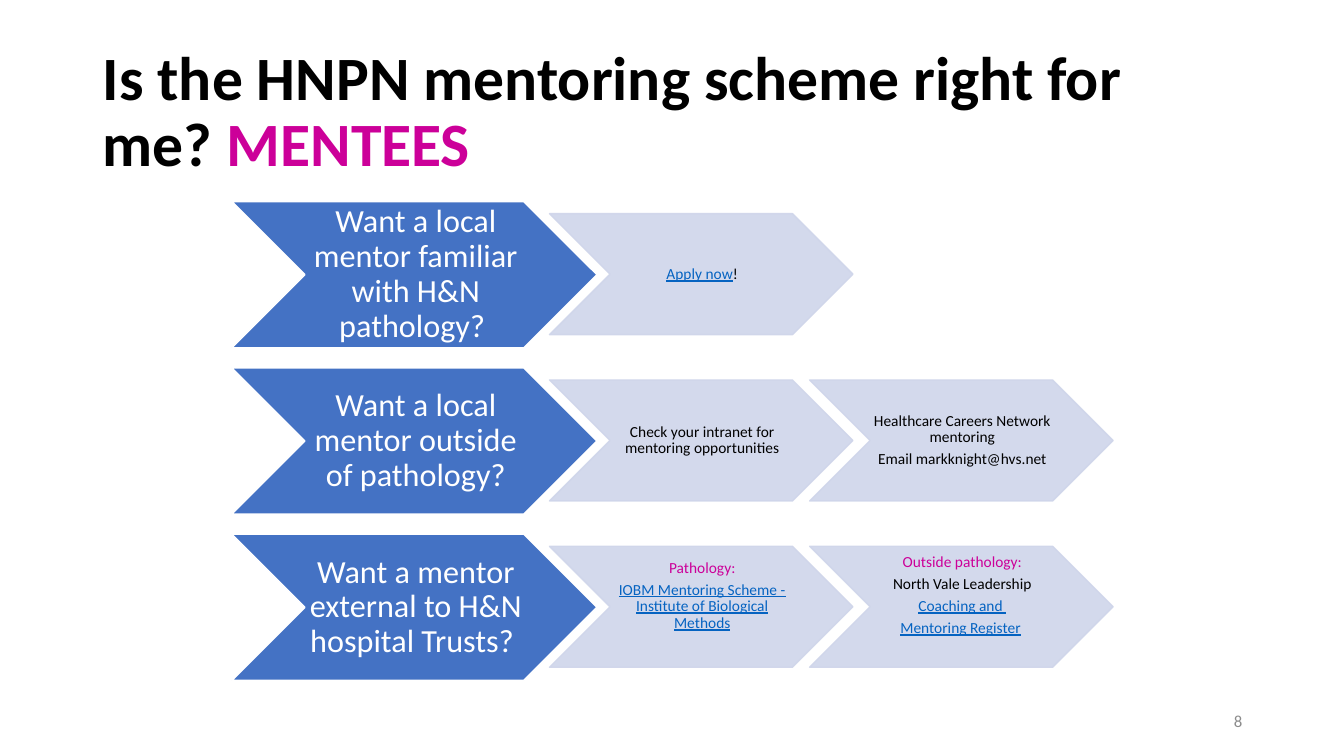
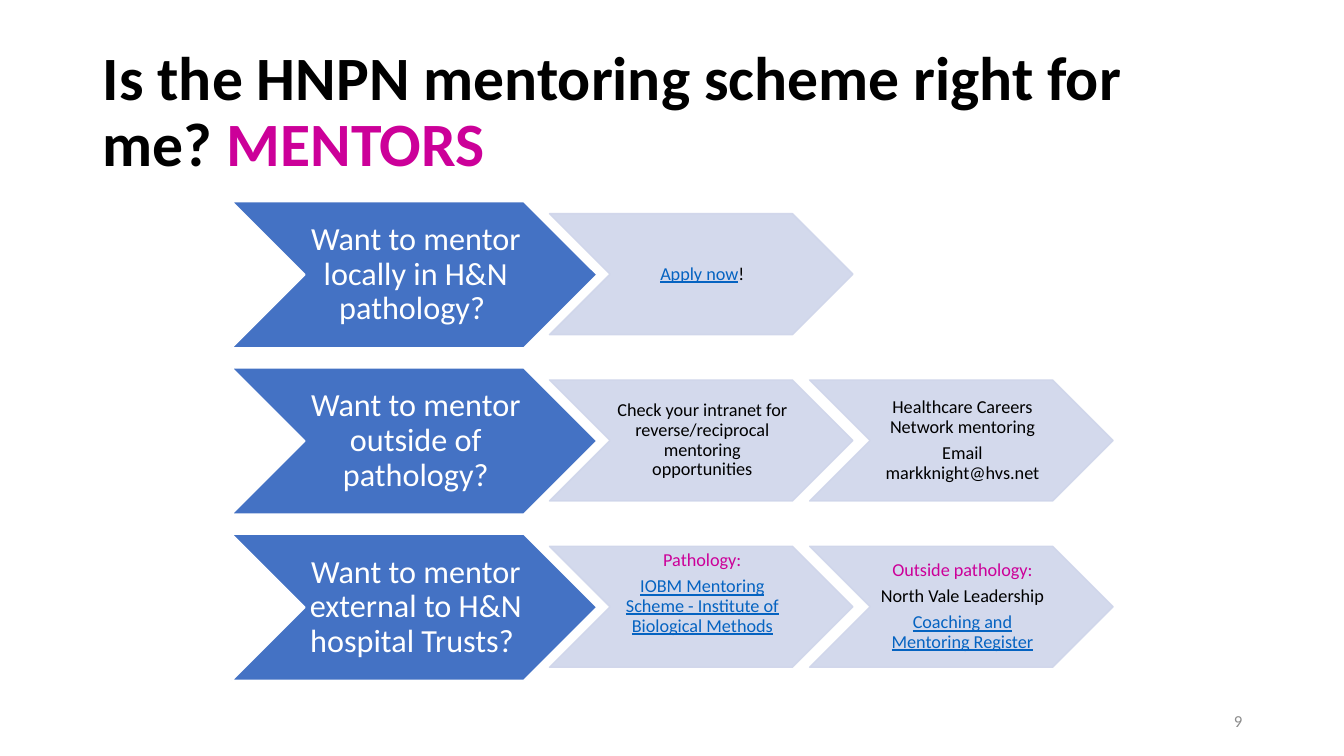
import pptx
import pptx.util
import pptx.dml.color
import pptx.enum.shapes
import pptx.enum.text
import pptx.oxml.ns
import lxml.etree

RGBColor = pptx.dml.color.RGBColor
ALIGN = pptx.enum.text.PP_ALIGN
MIDDLE = pptx.enum.text.MSO_ANCHOR.MIDDLE

PX = 9144  # EMU in one px, 100 px to the inch
FONT = "Calibri"
BLACK = RGBColor(0x00, 0x00, 0x00)
WHITE = RGBColor(0xFF, 0xFF, 0xFF)
BLUE = RGBColor(0x44, 0x72, 0xC4)
PALE = RGBColor(0xCF, 0xD5, 0xEA)
PINK = RGBColor(0xCC, 0x00, 0x99)
LINK = RGBColor(0x05, 0x63, 0xC1)
GREY = RGBColor(0x8C, 0x8C, 0x8C)

TITLE_BOX = (92, 40, 1150, 145)
NUMBER_BOX = (942, 695, 300, 40)
CHART_BOX = (230, 200, 874, 475)
QUESTION_W, QUESTION_H, ROW_STEP = 362, 145, 165
ANSWER_W, ANSWER_H, ANSWER_X, ANSWER_STEP = 301, 120, 315, 258

# Each paragraph is a list of (text, colour) runs
APPLY = [[("Apply now", LINK), ("!", BLACK)]]
NETWORK = [[("Healthcare Careers Network mentoring", BLACK)],
           [("Email markknight@hvs.net", BLACK)]]
PATHOLOGY = [[("Pathology:", PINK)],
             [("IOBM Mentoring Scheme - Institute of Biological Methods", LINK)]]
OUTSIDE = [[("Outside pathology:", PINK)], [("North Vale Leadership", BLACK)]]

# A row is a question and its answers; an answer is (paragraphs, bottom inset)
SLIDES = [
    dict(audience="MENTEES", number=8, size=11, rows=[
        ("Want a local mentor familiar with H&N pathology? ", [(APPLY, 1)]),
        ("Want a local mentor outside of pathology?",
         [([[("Check your intranet for mentoring opportunities", BLACK)]], 1),
          (NETWORK, 1)]),
        ("Want a mentor external to H&N hospital Trusts? ",
         [(PATHOLOGY, 23),
          (OUTSIDE + [[("Coaching and ", LINK)],
                      [("Mentoring Register", LINK), (" ", BLACK)]], 23)]),
    ]),
    dict(audience="MENTORS", number=9, size=13, rows=[
        ("Want to mentor locally in H&N pathology? ", [(APPLY, 1)]),
        ("Want to mentor outside of pathology?",
         [([[("Check your intranet for reverse/reciprocal mentoring "
              "opportunities", BLACK)]], 1),
          (NETWORK, 1)]),
        ("Want to mentor external to H&N hospital Trusts? ",
         [(PATHOLOGY, 27),
          (OUTSIDE + [[("Coaching and Mentoring Register", LINK)]], 1)]),
    ]),
]


def emu(box):
    return [v * PX for v in box]


def write(tf, paragraphs, size, align=ALIGN.CENTER, bold=False,
          line_spacing=0.9, after=0, insets=(10, 5, 10, 5)):
    """Fill a text frame; runs in the link colour are underlined."""
    tf.word_wrap = True
    tf.auto_size = pptx.enum.text.MSO_AUTO_SIZE.NONE
    tf.vertical_anchor = MIDDLE
    (tf.margin_left, tf.margin_top,
     tf.margin_right, tf.margin_bottom) = emu(insets)
    for i, runs in enumerate(paragraphs):
        p = tf.add_paragraph() if i else tf.paragraphs[0]
        p.alignment = align
        p.line_spacing = line_spacing
        p.space_before = pptx.util.Pt(0)
        p.space_after = pptx.util.Pt(after)
        for text, colour in runs:
            r = p.add_run()
            r.text = text
            r.font.name = FONT
            r.font.size = pptx.util.Pt(size)
            r.font.bold = bold
            r.font.underline = colour == LINK
            r.font.color.rgb = colour


def add_chevron(slide, box, fill, line, opacity=100):
    sp = slide.shapes.add_shape(
        pptx.enum.shapes.MSO_SHAPE.CHEVRON, *emu(box))
    sp.shadow.inherit = False
    sp.fill.solid()
    sp.fill.fore_color.rgb = fill
    sp.line.color.rgb = line
    sp.line.width = pptx.util.Pt(1)
    if opacity < 100:
        qn = pptx.oxml.ns.qn
        for clr in sp._element.spPr.iter(qn("a:srgbClr")):
            lxml.etree.SubElement(clr, qn("a:alpha"), val=str(opacity * 1000))
    return sp


def add_row(slide, x, y, question, answers, size):
    # Question
    sp = add_chevron(slide, (x, y, QUESTION_W, QUESTION_H), BLUE, WHITE)
    write(sp.text_frame, [[(question, WHITE)]], 23, insets=(3, 2, 0, 2))
    # Answers, centred on the question's height
    top = y + (QUESTION_H - ANSWER_H) // 2
    for i, (paragraphs, bottom) in enumerate(answers):
        left = x + ANSWER_X + i * ANSWER_STEP
        sp = add_chevron(slide, (left, top, ANSWER_W, ANSWER_H),
                         PALE, PALE, opacity=90)
        write(sp.text_frame, paragraphs, size, after=round(size * 0.35, 1),
              insets=(2, 1, 0, bottom))


def add_chart_rows(slide, box, rows, size):
    x, y = box[:2]
    for i, (question, answers) in enumerate(rows):
        add_row(slide, x, y + i * ROW_STEP, question, answers, size)


def add_title(slide, box, audience):
    sp = slide.shapes.title
    sp.left, sp.top, sp.width, sp.height = emu(box)
    write(sp.text_frame,
          [[("Is the HNPN mentoring scheme right for me? ", BLACK),
            (audience, PINK)]],
          44, align=ALIGN.LEFT, bold=True)


def add_number(slide, box, number):
    sp = slide.shapes.add_textbox(*emu(box))
    write(sp.text_frame, [[(str(number), GREY)]], 12,
          align=ALIGN.RIGHT, line_spacing=1.0)


def add_scheme_slide(prs, audience, number, size, rows):
    slide = prs.slides.add_slide(prs.slide_layouts[5])  # title only
    add_title(slide, TITLE_BOX, audience)
    add_chart_rows(slide, CHART_BOX, rows, size)
    add_number(slide, NUMBER_BOX, number)


def main():
    prs = pptx.Presentation()
    prs.slide_width, prs.slide_height = emu((1333, 750))
    for content in SLIDES:
        add_scheme_slide(prs, **content)
    prs.save("out.pptx")


if __name__ == "__main__":
    main()
